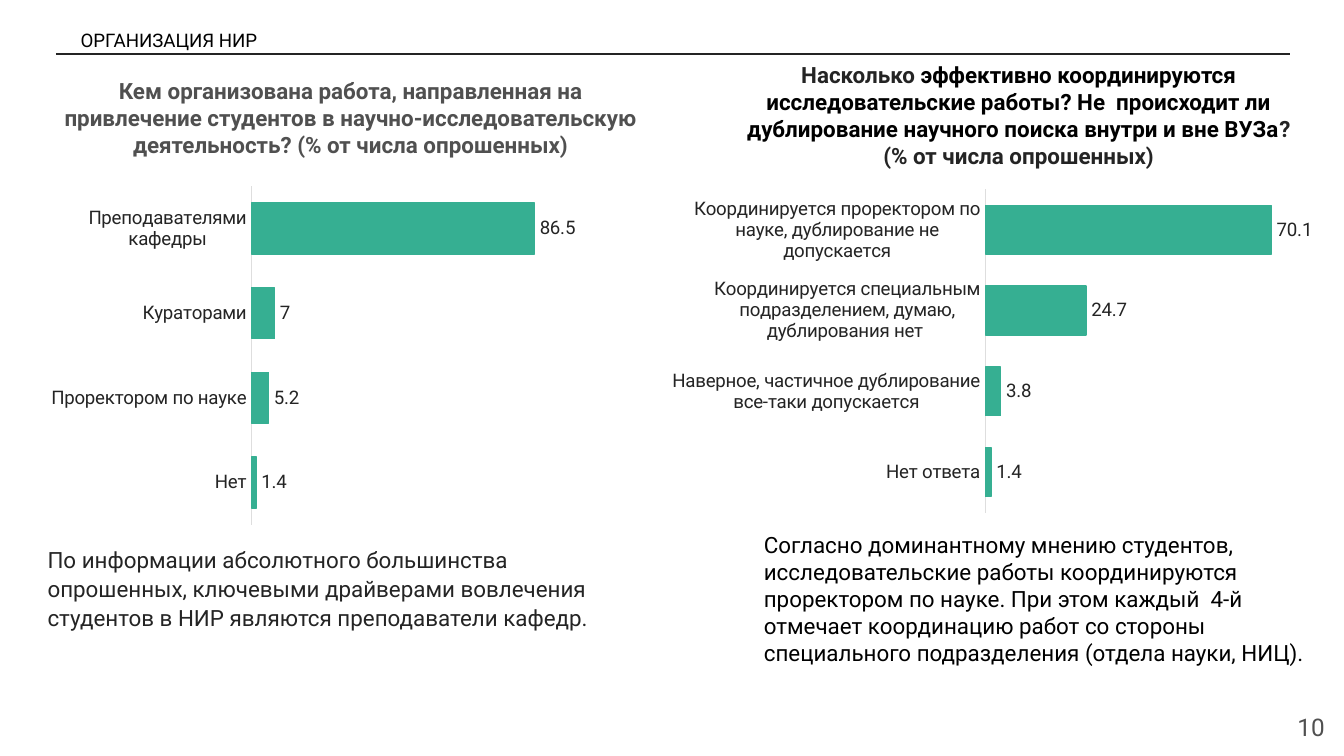
from lxml import etree
from pptx import Presentation
from pptx.chart.data import CategoryChartData
from pptx.dml.color import RGBColor
from pptx.enum.chart import XL_CHART_TYPE, XL_LABEL_POSITION, XL_TICK_MARK
from pptx.enum.shapes import MSO_CONNECTOR
from pptx.enum.text import MSO_ANCHOR, MSO_AUTO_SIZE, PP_ALIGN
from pptx.oxml.ns import qn
from pptx.util import Inches, Pt

BAR = XL_CHART_TYPE.BAR_CLUSTERED
OUTSIDE = XL_LABEL_POSITION.OUTSIDE_END
NO_TICK = XL_TICK_MARK.NONE
STRAIGHT = MSO_CONNECTOR.STRAIGHT
TOP, MIDDLE, BOTTOM = MSO_ANCHOR.TOP, MSO_ANCHOR.MIDDLE, MSO_ANCHOR.BOTTOM
LEFT, CENTER, RIGHT = PP_ALIGN.LEFT, PP_ALIGN.CENTER, PP_ALIGN.RIGHT
NO_FIT = MSO_AUTO_SIZE.NONE

FONT = "Roboto"
INK, BLACK, GRAY = "242424", "000000", "505050"
AXIS, GREEN = "DEDEDE", "36AF92"
COLUMNS, ROWS = 100, 56.25
UNIT = Inches(0.1)

ORGANIZERS = {
    "Нет": 1.4,
    "Проректором по науке": 5.2,
    "Кураторами": 7,
    "Преподавателями кафедры": 86.5,
}
COORDINATION = {
    "Нет ответа": 1.4,
    "Наверное, частичное дублирование все-таки допускается": 3.8,
    "Координируется специальным подразделением, думаю, дублирования нет ": 24.7,
    "Координируется проректором по науке, дублирование не допускается": 70.1,
}


def color(value):
    """Turn a hex string into a colour."""
    return RGBColor.from_string(value)


def grid(*cells):
    """Turn grid columns and rows into lengths."""
    return [int(cell * UNIT) for cell in cells]


def format_font(font, size, hex_color, bold=False):
    """Set the typeface, size, colour and weight of a font."""
    font.name = FONT
    font.size = Pt(size)
    font.bold = bold
    font.color.rgb = color(hex_color)


def write_text(shape, *runs, size=12, bold=False, align=LEFT, anchor=TOP,
               padding=1, spacing=1.0):
    """Fill a shape with one paragraph of (text, colour) runs."""
    frame = shape.text_frame
    frame.word_wrap = True
    frame.auto_size = NO_FIT
    frame.vertical_anchor = anchor
    frame.margin_left = frame.margin_right = UNIT
    frame.margin_top = frame.margin_bottom = int(padding * UNIT)
    paragraph = frame.paragraphs[0]
    paragraph.alignment = align
    paragraph.line_spacing = spacing
    for text, hex_color in runs:
        run = paragraph.add_run()
        run.text = text
        format_font(run.font, size, hex_color, bold)


def add_text(slide, cells, *runs, **style):
    """Add a text box on the given grid cells."""
    write_text(slide.shapes.add_textbox(*grid(*cells)), *runs, **style)


def add_header(slide, text):
    """Place the slide title above its rule."""
    title = slide.shapes.title
    title.left, title.top, title.width, title.height = grid(5, 0, 36.3, 4.35)
    write_text(title, (text, BLACK), size=10, anchor=BOTTOM, padding=0.5)
    rule = slide.shapes.add_connector(STRAIGHT, *grid(4.15, 4.02, 96, 4.02))
    rule.line.color.rgb = color(INK)
    rule.line.width = Pt(0.75)
    etree.SubElement(rule._element.spPr, qn("a:effectLst"))


def set_plot_layout(chart, shares):
    """Fix the inner plot area as shares of the chart."""
    plot_area = chart.element.find(".//" + qn("c:plotArea"))
    for old in plot_area.findall(qn("c:layout")):
        plot_area.remove(old)
    layout = etree.Element(qn("c:layout"))
    manual = etree.SubElement(layout, qn("c:manualLayout"))
    settings = [("layoutTarget", "inner"), ("xMode", "edge"), ("yMode", "edge")]
    settings += zip("xywh", shares)
    for tag, value in settings:
        etree.SubElement(manual, qn("c:" + tag)).set("val", str(value))
    plot_area.insert(0, layout)


def add_bar_chart(slide, cells, answers, maximum, plot_shares):
    """Add a horizontal bar chart of answer percentages."""
    data = CategoryChartData()
    data.categories = list(answers)
    data.add_series("Series 1", list(answers.values()))
    chart = slide.shapes.add_chart(BAR, *grid(*cells), data).chart
    chart.has_title = chart.has_legend = False
    format_font(chart.font, 10, INK)

    value_axis = chart.value_axis
    value_axis.minimum_scale, value_axis.maximum_scale = 0, maximum
    value_axis.has_major_gridlines = False
    value_axis.visible = False
    category_axis = chart.category_axis
    category_axis.major_tick_mark = category_axis.minor_tick_mark = NO_TICK
    category_axis.format.line.color.rgb = color(AXIS)
    category_axis.format.line.width = Pt(0.75)
    format_font(category_axis.tick_labels.font, 10, INK)

    plot = chart.plots[0]
    plot.gap_width = 66
    plot.vary_by_categories = False
    plot.has_data_labels = True
    plot.data_labels.show_value = True
    plot.data_labels.position = OUTSIDE
    format_font(plot.data_labels.font, 10, INK)
    bars = plot.series[0].format
    bars.fill.solid()
    bars.fill.fore_color.rgb = color(GREEN)
    bars.line.color.rgb = color(GREEN)
    bars.line.width = Pt(0.75)
    set_plot_layout(chart, plot_shares)


def main():
    """Build and save the slide."""
    presentation = Presentation()
    presentation.slide_width, presentation.slide_height = grid(COLUMNS, ROWS)
    slide = presentation.slides.add_slide(presentation.slide_layouts[5])
    add_header(slide, "ОРГАНИЗАЦИЯ НИР")

    add_text(slide, (2.55, 4.75, 47.1, 8.1),
             ("Кем организована работа, направленная на привлечение студентов в "
              "научно-исследовательскую деятельность? (% от числа опрошенных)", GRAY),
             bold=True, align=CENTER)
    add_bar_chart(slide, (2.5, 13.8, 42.7, 25.3), ORGANIZERS, 100, (0.38, 0, 0.57, 1))
    add_text(slide, (2.55, 39.5, 46.8, 8.6),
             ("По информации абсолютного большинства опрошенных, ключевыми драйверами "
              "вовлечения студентов в НИР являются преподаватели кафедр.", INK),
             spacing=1.08)

    add_text(slide, (54.2, 3.55, 43.2, 10.1),
             ("Насколько ", INK),
             ("эффективно координируются исследовательские работы? Не  происходит ли "
              "дублирование научного поиска внутри и вне ВУЗа", BLACK),
             ("? (% от числа опрошенных)", INK),
             bold=True, align=CENTER)
    add_bar_chart(slide, (50, 13.6, 49.6, 24.6), COORDINATION, 80, (0.47, 0.02, 0.49, 0.98))
    add_text(slide, (55.85, 39.05, 44.1, 11.1),
             ("Согласно доминантному мнению студентов, исследовательские работы "
              "координируются проректором по науке. При этом каждый  4-й отмечает "
              "координацию работ со стороны специального подразделения "
              "(отдела науки, НИЦ).", BLACK),
             padding=0.5)

    add_text(slide, (93.55, 51.9, 6, 4.3), ("10", GRAY),
             size=13, align=RIGHT, anchor=MIDDLE)
    presentation.save("out.pptx")


if __name__ == "__main__":
    main()
